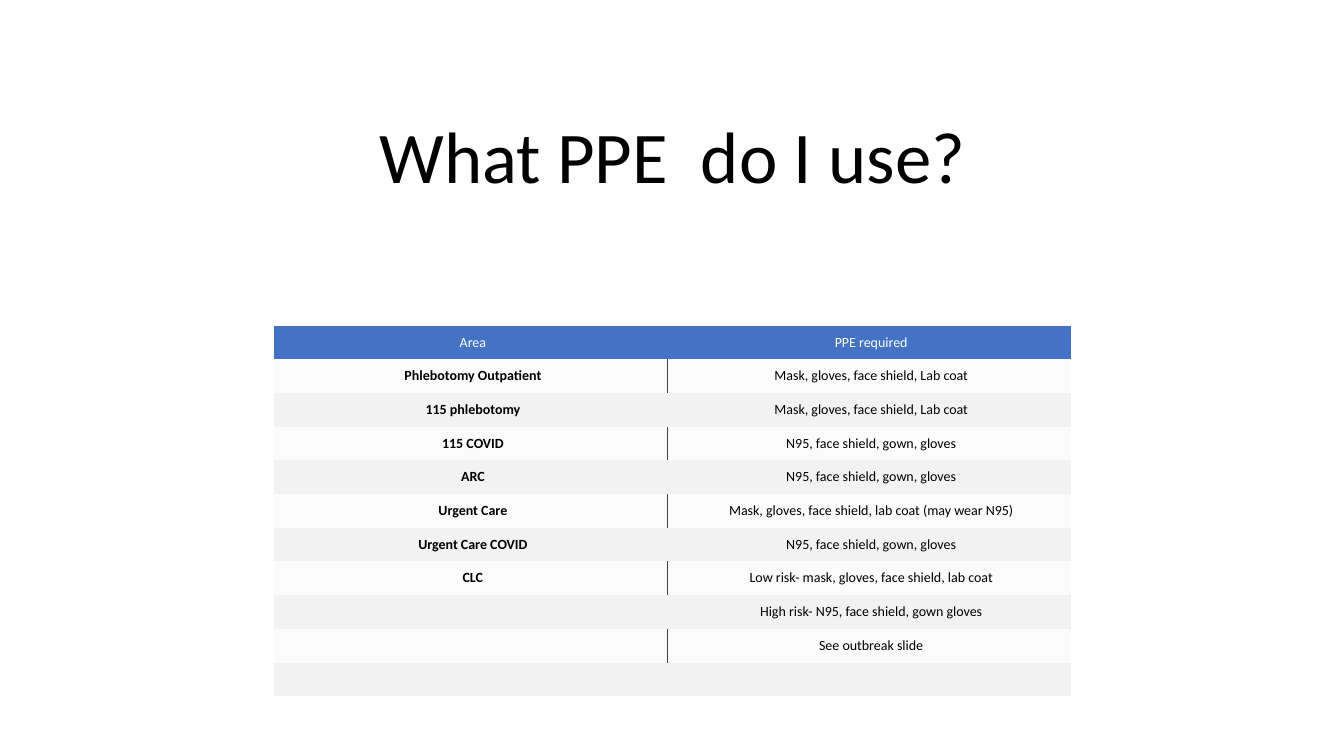
"""Build the slide that lists the PPE required in each area."""
from lxml.etree import SubElement
from pptx import Presentation
from pptx.dml.color import RGBColor
from pptx.enum.text import MSO_ANCHOR, PP_ALIGN
from pptx.oxml import parse_xml
from pptx.oxml.ns import nsdecls, qn
from pptx.util import Inches, Pt


def color(hex_string):
    return RGBColor.from_string(hex_string)


def write(tf, text, size=10, fill="000000", bold=False, spacing=1.07):
    p = tf.paragraphs[0]
    p.alignment = PP_ALIGN.CENTER
    p.line_spacing = spacing
    if text:
        r = p.add_run()
        r.text = text
        r.font.name = "Calibri"
        r.font.size = Pt(size)
        r.font.bold = bold
        r.font.color.rgb = color(fill)
    else:
        SubElement(p._p, qn("a:endParaRPr"), sz=str(size * 100))


ROWS = [
    ("Area", "PPE required"),
    ("Phlebotomy Outpatient", "Mask, gloves, face shield, Lab coat"),
    ("115 phlebotomy", "Mask, gloves, face shield, Lab coat"),
    ("115 COVID", "N95, face shield, gown, gloves"),
    ("ARC", "N95, face shield, gown, gloves"),
    ("Urgent Care", "Mask, gloves, face shield, lab coat (may wear N95)"),
    ("Urgent Care COVID", "N95, face shield, gown, gloves"),
    ("CLC", "Low risk- mask, gloves, face shield, lab coat"),
    ("", "High risk- N95, face shield, gown gloves"),
    ("", "See outbreak slide"),
    ("", ""),
]
COL_WIDTHS = (3.9, 4)
NO_STYLE = "{2D5ABB26-0587-4C30-8999-92F81FD0307C}"

prs = Presentation()
prs.slide_width, prs.slide_height = Inches(13.33), Inches(7.5)
s = prs.slides.add_slide(prs.slide_layouts[5])

title = s.shapes.title
title.left, title.top = Inches(0.92), Inches(0.61)
title.width, title.height = Inches(11.5), Inches(1.42)
title.text_frame.vertical_anchor = MSO_ANCHOR.BOTTOM
write(title.text_frame, "What PPE  do I use?", size=52, spacing=0.9)

table = s.shapes.add_table(len(ROWS), 2, Inches(2.72), Inches(3.23),
                           Inches(sum(COL_WIDTHS)), Inches(3.68)).table
table.first_row = table.horz_banding = False
table._tbl.tblPr.find(qn("a:tableStyleId")).text = NO_STYLE
for column, width in zip(table.columns, COL_WIDTHS):
    column.width = Inches(width)

for i, row in enumerate(ROWS):
    header, pale = i == 0, i % 2 == 1
    for j, text in enumerate(row):
        cell = table.cell(i, j)
        cell.margin_left, cell.margin_right = Inches(0.09), Inches(0.05)
        cell.margin_top = cell.margin_bottom = Inches(0.07)
        cell.vertical_anchor = MSO_ANCHOR.MIDDLE if header else MSO_ANCHOR.TOP
        write(cell.text_frame, text, fill="FFFFFF" if header else "000000",
              bold=j == 0 and not header)
        cell.fill.solid()
        cell.fill.fore_color.rgb = color("4472C4" if header else "F2F2F2")
        if pale:
            tcPr = cell._tc.tcPr
            SubElement(tcPr.find(".//" + qn("a:srgbClr")), qn("a:alpha"), val="30000")
            side = "lnL" if j else "lnR"
            tcPr.insert(0, parse_xml(
                f'<a:{side} {nsdecls("a")} w="{Pt(0.5)}"><a:solidFill>'
                f'<a:srgbClr val="404040"/></a:solidFill></a:{side}>'))

prs.save("out.pptx")
